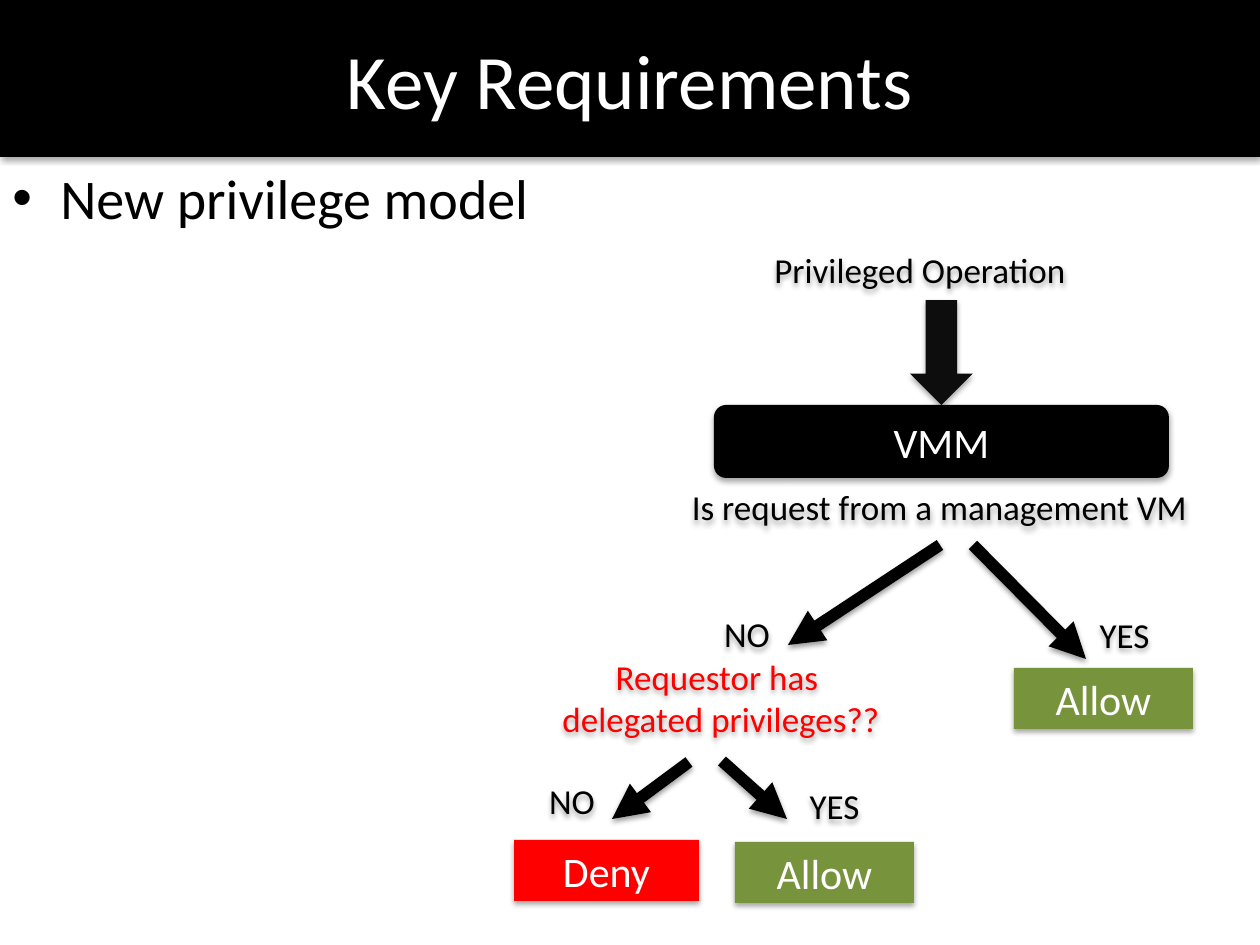
from lxml.etree import SubElement
from pptx import Presentation
from pptx.dml.color import RGBColor
from pptx.enum.shapes import MSO_CONNECTOR, MSO_SHAPE as Preset
from pptx.enum.text import MSO_ANCHOR as Anchor, PP_ALIGN as Align
from pptx.oxml.ns import qn
from pptx.util import Inches, Pt

SCALE = Inches(1) / 126
SLIDE_SIZE = (1260, 945)
BLACK, WHITE, RED, GREEN = "000000", "FFFFFF", "FF0000", "77933C"

TITLE = ("Key Requirements", (0, 0, 1260, 157))
BULLET = ("New privilege model", (0, 157, 1260, 788))

BOXES = [
    ("VMM", Preset.ROUNDED_RECTANGLE, (714, 405, 455, 73), BLACK),
    ("", Preset.DOWN_ARROW, (910, 300, 63, 105), "0D0D0D"),
    ("Allow", Preset.RECTANGLE, (1014, 668, 179, 61), GREEN),
    ("Deny", Preset.RECTANGLE, (514, 840, 185, 61), RED),
    ("Allow", Preset.RECTANGLE, (735, 842, 179, 61), GREEN),
]
LABELS = [
    ("Privileged Operation", (762, 242, 355, 78), BLACK, Align.LEFT, Anchor.TOP),
    ("Is request from a management VM", (651, 468, 577, 78), BLACK, Align.CENTER, Anchor.MIDDLE),
    ("YES", (1077, 605, 95, 58), BLACK, Align.CENTER, Anchor.MIDDLE),
    ("NO", (689, 595, 116, 78), BLACK, Align.CENTER, Anchor.MIDDLE),
    ("Requestor has\n delegated privileges??", (535, 651, 364, 92), RED, Align.CENTER, Anchor.MIDDLE),
    ("NO", (514, 762, 116, 78), BLACK, Align.CENTER, Anchor.MIDDLE),
    ("YES", (787, 777, 95, 58), BLACK, Align.CENTER, Anchor.MIDDLE),
]
BRANCHES = [
    (973, 545, 1086, 659),
    (940, 545, 788, 645),
    (722, 761, 787, 819),
    (689, 762, 612, 819),
]


def px(values):
    """Turn px lengths into EMU."""
    return [round(value * SCALE) for value in values]


def color(hex_code):
    """Make a colour from a hex string."""
    return RGBColor.from_string(hex_code)


def cast_shadow(item, alpha=35000, distance=23000):
    """Give an item a soft shadow that falls straight down."""
    effects = SubElement(item._element.spPr, qn("a:effectLst"))
    shadow = SubElement(effects, qn("a:outerShdw"), blurRad="40000", dist=str(distance),
                        dir="5400000", rotWithShape="0")
    tint = SubElement(shadow, qn("a:srgbClr"), val=BLACK)
    SubElement(tint, qn("a:alpha"), val=str(alpha))


def paint(box, fill):
    """Fill a box, drop its outline and add the shadow."""
    box.fill.solid()
    box.fill.fore_color.rgb = color(fill)
    box.line.fill.background()
    cast_shadow(box)


def write(box, text, size, ink, align=Align.CENTER, anchor=Anchor.MIDDLE):
    """Write formatted text, one paragraph a line."""
    frame = box.text_frame
    frame.text = text
    frame.word_wrap = True
    frame.vertical_anchor = anchor
    font_format = {"name": "Calibri", "size": Pt(size), "bold": False}
    for paragraph in frame.paragraphs:
        paragraph.alignment = align
        for run in paragraph.runs:
            for key, value in font_format.items():
                setattr(run.font, key, value)
            run.font.color.rgb = color(ink)


def place_title(slide):
    """Move and format the title placeholder."""
    heading, area = TITLE
    title = slide.shapes.title
    for side, length in zip(("left", "top", "width", "height"), px(area)):
        setattr(title, side, length)
    paint(title, BLACK)
    write(title, heading, 44, WHITE)


def add_bullet(slide):
    """Add the bulleted statement under the title."""
    statement, area = BULLET
    body = slide.shapes.add_textbox(*px(area))
    write(body, statement, 32, BLACK, Align.LEFT, Anchor.TOP)
    paragraph = body.text_frame.paragraphs[0]
    paragraph.space_before = Pt(6.4)
    properties = paragraph._p.get_or_add_pPr()
    indent = px([48])[0]
    properties.set("marL", str(indent))
    properties.set("indent", str(-indent))
    SubElement(properties, qn("a:buFont"), typeface="Arial")
    SubElement(properties, qn("a:buChar"), char="•")


def add_branch(slide, ends):
    """Add a thick arrow between two points."""
    branch = slide.shapes.add_connector(MSO_CONNECTOR.STRAIGHT, *px(ends))
    branch.line.color.rgb = color(BLACK)
    branch.line.width = Pt(6.75)
    SubElement(branch.line._get_or_add_ln(), qn("a:tailEnd"), type="triangle")
    cast_shadow(branch, 38000, 20000)


def main():
    """Build the slide and save it."""
    deck = Presentation()
    deck.slide_width, deck.slide_height = px(SLIDE_SIZE)
    slide = deck.slides.add_slide(deck.slide_layouts[5])
    place_title(slide)
    add_bullet(slide)
    for text, preset, area, fill in BOXES:
        box = slide.shapes.add_shape(preset, *px(area))
        paint(box, fill)
        write(box, text, 24, WHITE)
    for ends in BRANCHES:
        add_branch(slide, ends)
    for text, area, ink, align, anchor in LABELS:
        label = slide.shapes.add_textbox(*px(area))
        write(label, text, 20, ink, align, anchor)
        cast_shadow(label)
    deck.save("out.pptx")


if __name__ == "__main__":
    main()
